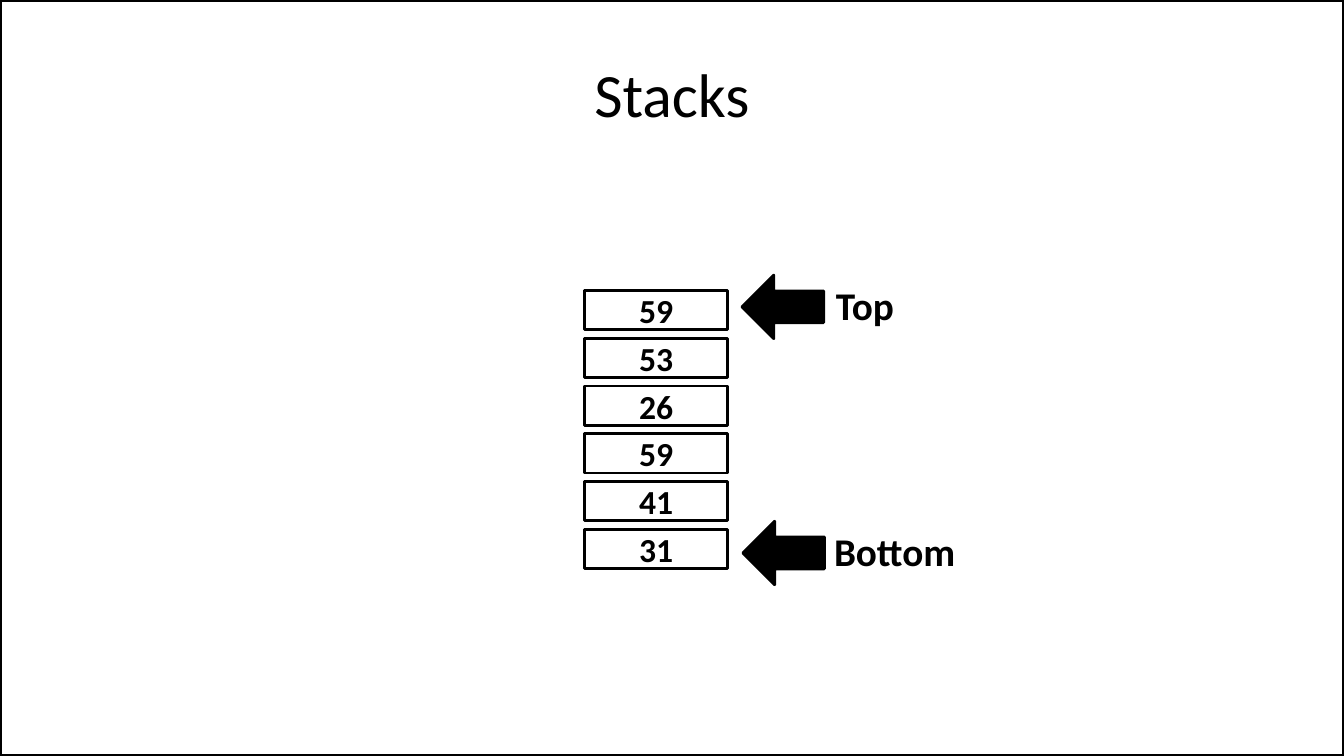
from pptx import Presentation
from pptx.dml.color import RGBColor
from pptx.enum.shapes import MSO_SHAPE
from pptx.enum.text import MSO_ANCHOR, MSO_AUTO_SIZE, PP_ALIGN
from pptx.util import Pt

TITLE = "Stacks"
STACK = ["59", "53", "26", "59", "41", "31"]
MARKERS = [
    {"label": "Top", "arrow": (530, 196.5), "text": (589.7, 197.3, 56.2)},
    {"label": "Bottom", "arrow": (530.6, 372.3), "text": (587.5, 373, 103)},
]

BLACK = RGBColor(0, 0, 0)
FONT = "Calibri"
SLIDE_W, SLIDE_H = 960, 540
CELL_LEFT, CELL_TOP, CELL_W, CELL_H = 417.6, 207.5, 102.2, 28.1
CELL_PITCH = 34.1
ARROW_W, ARROW_H = 58.3, 45.4
LABEL_H = 41.2


def write(sp, text, size, bold=True, anchor=MSO_ANCHOR.MIDDLE):
    tf = sp.text_frame
    tf.text = text
    tf.vertical_anchor = anchor
    p = tf.paragraphs[0]
    p.alignment = PP_ALIGN.CENTER
    font = p.runs[0].font
    font.name, font.size, font.bold = FONT, Pt(size), bold
    font.color.rgb = BLACK


def add_outlined(s, kind, left, top, width, height, line=2, filled=False):
    sp = s.shapes.add_shape(kind, Pt(left), Pt(top), Pt(width), Pt(height))
    sp.shadow.inherit = False
    sp.line.color.rgb = BLACK
    sp.line.width = Pt(line)
    if filled:
        sp.fill.solid()
        sp.fill.fore_color.rgb = BLACK
    else:
        sp.fill.background()
    return sp


def main():
    prs = Presentation()
    prs.slide_width, prs.slide_height = Pt(SLIDE_W), Pt(SLIDE_H)
    s = prs.slides.add_slide(prs.slide_layouts[5])

    title = s.shapes.title
    title.left, title.top = Pt(48), Pt(21.6)
    title.width, title.height = Pt(864), Pt(90)
    write(title, TITLE, 44, bold=False)

    add_outlined(s, MSO_SHAPE.RECTANGLE, 0, 0, SLIDE_W, SLIDE_H, line=3)

    for i, value in enumerate(STACK):
        cell = add_outlined(s, MSO_SHAPE.RECTANGLE, CELL_LEFT,
                            CELL_TOP + i * CELL_PITCH, CELL_W, CELL_H)
        write(cell, value, 24)

    for marker in MARKERS:
        left, top, width = marker["text"]
        label = s.shapes.add_textbox(Pt(left), Pt(top), Pt(width), Pt(LABEL_H))
        write(label, marker["label"], 28, anchor=MSO_ANCHOR.TOP)
        label.text_frame.word_wrap = False
        label.text_frame.auto_size = MSO_AUTO_SIZE.SHAPE_TO_FIT_TEXT
        add_outlined(s, MSO_SHAPE.LEFT_ARROW, *marker["arrow"],
                     ARROW_W, ARROW_H, filled=True)

    prs.save("out.pptx")


if __name__ == "__main__":
    main()
